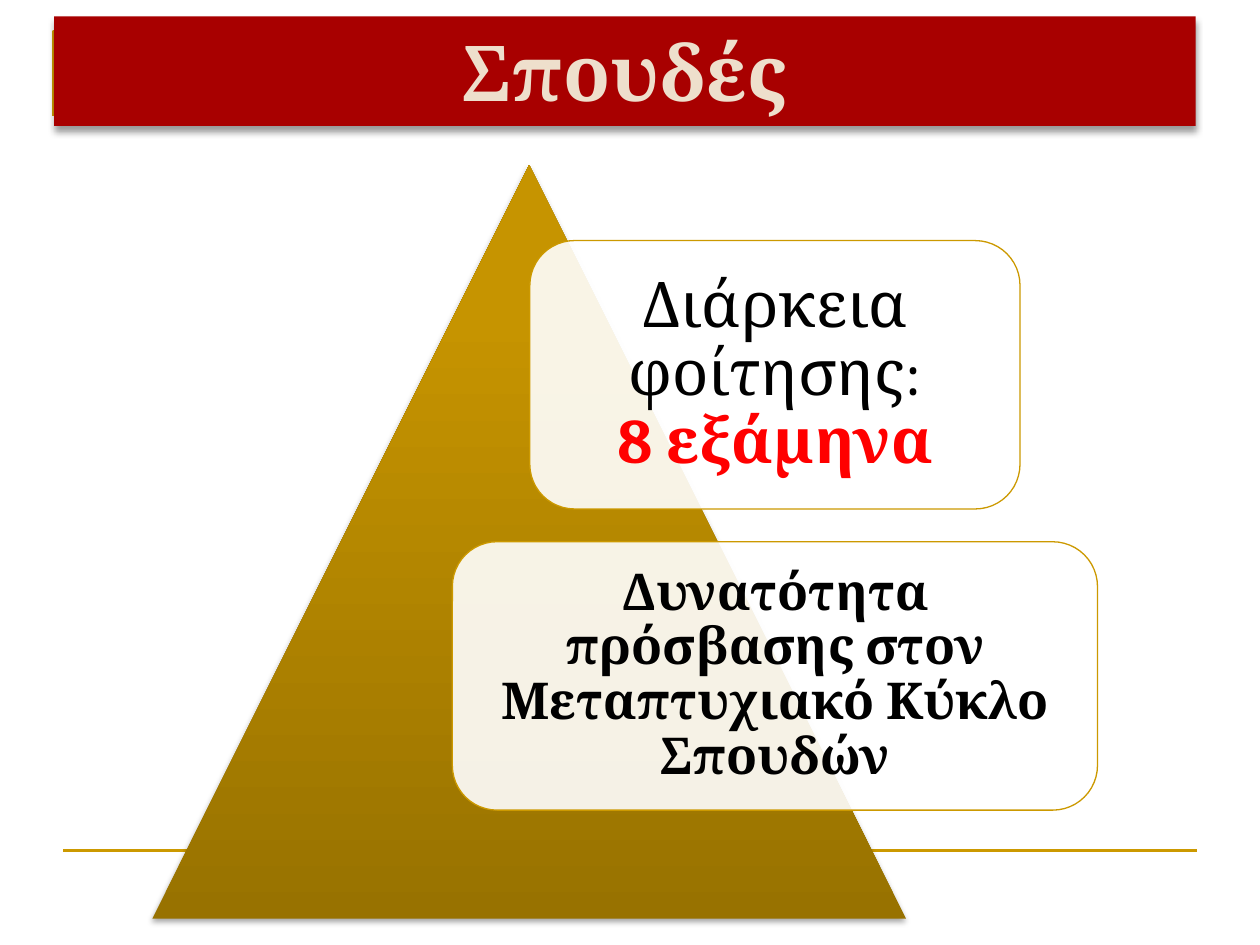
from dataclasses import dataclass

from lxml.etree import SubElement
from pptx import Presentation
from pptx.dml.color import RGBColor
from pptx.enum.shapes import MSO_CONNECTOR as Connector, MSO_SHAPE as Shape
from pptx.enum.text import MSO_ANCHOR as Anchor, PP_ALIGN as Align
from pptx.oxml import parse_xml
from pptx.oxml.ns import nsdecls, qn
from pptx.util import Inches, Pt


@dataclass(frozen=True)
class Theme:
    font: str = "Cambria"
    gold: str = "CC9900"
    red: str = "A80000"
    cream: str = "EEDFCC"
    white: str = "FFFFFF"
    black: str = "000000"
    highlight: str = "FF0000"
    pyramid: tuple = ((0, "987200"), (80, "C69400"), (100, "C79500"))
    title_size: int = 44
    duration_size: int = 36
    access_size: int = 29
    rule_width: float = 1.5
    card_line: float = 0.75
    card_opacity: int = 90


THEME = Theme()


def set_values(target, values):
    for name, value in values.items():
        setattr(target, name, value)


def set_line(shape, color, width):
    shape.line.color.rgb = RGBColor.from_string(color)
    shape.line.width = Pt(width)


def set_fill(shape, color, opacity=100):
    shape.fill.solid()
    shape.fill.fore_color.rgb = RGBColor.from_string(color)
    if opacity < 100:
        color_element = shape.fill._xPr.find(qn("a:solidFill"))[0]
        SubElement(color_element, qn("a:alpha"), val=str(opacity * 1000))


def add_shadow(shape, opacity, blur, distance):
    """Drop a black shadow straight down; blur and distance are in points."""
    shape.shadow.inherit = False
    effects = shape._element.spPr.find(qn("a:effectLst"))
    shadow = SubElement(effects, qn("a:outerShdw"), blurRad=str(Pt(blur)),
                        dist=str(Pt(distance)), dir="5400000", rotWithShape="0")
    color = SubElement(shadow, qn("a:srgbClr"), val=THEME.black)
    SubElement(color, qn("a:alpha"), val=str(opacity * 1000))


def write_text(shape, lines, size, inset=0.1, spacing=1.0):
    """Write centred paragraphs; each line is (text, color, bold)."""
    frame = shape.text_frame
    margins = ("margin_left", "margin_top", "margin_right", "margin_bottom")
    set_values(frame, dict.fromkeys(margins, Inches(inset)))
    set_values(frame, {"word_wrap": True, "vertical_anchor": Anchor.MIDDLE})
    for index, (text, color, bold) in enumerate(lines):
        paragraph = frame.add_paragraph() if index else frame.paragraphs[0]
        set_values(paragraph, {"alignment": Align.CENTER, "line_spacing": spacing})
        run = paragraph.add_run()
        run.text = text
        set_values(run.font, {"name": THEME.font, "size": Pt(size), "bold": bold})
        run.font.color.rgb = RGBColor.from_string(color)


def add_frame_rules(slide, left, top, width, height):
    """Gold corner behind the title and gold rule near the foot."""
    corner_left, corner_top = left - Inches(0.08), top
    builder = slide.shapes.build_freeform(corner_left, corner_top + Inches(0.67))
    builder.add_line_segments(
        [(corner_left, corner_top), (corner_left + width, corner_top)], close=False)
    corner = builder.convert_to_shape()
    corner.fill.background()
    corner.shadow.inherit = False

    bottom = top + height
    rule = slide.shapes.add_connector(
        Connector.STRAIGHT, left, bottom, left + width, bottom)
    SubElement(rule._element.spPr, qn("a:effectLst"))
    for shape in (corner, rule):
        set_line(shape, THEME.gold, THEME.rule_width)


def add_pyramid(slide, left, top, width, height):
    """Gold triangle, darkest at its base."""
    pyramid = slide.shapes.add_shape(Shape.ISOSCELES_TRIANGLE, left, top, width, height)
    stops = "".join(f'<a:gs pos="{position * 1000}"><a:srgbClr val="{color}"/></a:gs>'
                    for position, color in THEME.pyramid)
    gradient = parse_xml(
        f'<a:gradFill {nsdecls("a")} rotWithShape="1"><a:gsLst>{stops}</a:gsLst>'
        '<a:lin ang="16200000" scaled="0"/></a:gradFill>')
    pyramid._element.spPr.find(qn("a:prstGeom")).addnext(gradient)
    pyramid.line.fill.background()
    add_shadow(pyramid, opacity=35, blur=3.15, distance=1.8)


def add_card(slide, left, top, width, height, lines, size, inset):
    """Translucent rounded card with centred text."""
    card = slide.shapes.add_shape(Shape.ROUNDED_RECTANGLE, left, top, width, height)
    card.shadow.inherit = False
    set_fill(card, THEME.white, THEME.card_opacity)
    set_line(card, THEME.gold, THEME.card_line)
    write_text(card, lines, size, inset, spacing=0.9)


def add_cards(slide, left, top, width, height):
    """Two cards of equal height, centred on one axis."""
    card_height, center = Inches(2.13), left + width // 2
    cards = (
        (Inches(3.89), THEME.duration_size, 0.15,
         [("Διάρκεια φοίτησης:", THEME.black, False),
          ("8 εξάμηνα", THEME.highlight, True)]),
        (width, THEME.access_size, 0.12,
         [("Δυνατότητα πρόσβασης στον Μεταπτυχιακό Κύκλο Σπουδών",
           THEME.black, True)]),
    )
    step = height - card_height
    for index, (card_width, size, inset, lines) in enumerate(cards):
        add_card(slide, center - card_width // 2, top + index * step,
                 card_width, card_height, lines, size, inset)


def add_title(slide, left, top, width, height):
    """Red title banner."""
    banner = slide.shapes.add_shape(Shape.RECTANGLE, left, top, width, height)
    set_fill(banner, THEME.red)
    banner.line.fill.background()
    add_shadow(banner, opacity=40, blur=4, distance=3)
    write_text(banner, [("Σπουδές", THEME.cream, True)], THEME.title_size, inset=0.05)


def main():
    presentation = Presentation()
    set_values(presentation, {"slide_width": Inches(10), "slide_height": Inches(7.5)})
    slide = presentation.slides.add_slide(presentation.slide_layouts[6])

    # Regions from back to front: left, top, width, height
    regions = (
        (add_frame_rules, (0.5, 0.25, 9, 6.5)),
        (add_pyramid, (1.21, 1.31, 5.98, 5.98)),
        (add_cards, (3.59, 1.91, 5.12, 4.52)),
        (add_title, (0.43, 0.13, 9.06, 0.87)),
    )
    for add_region, box in regions:
        add_region(slide, *map(Inches, box))
    presentation.save("out.pptx")


if __name__ == "__main__":
    main()
